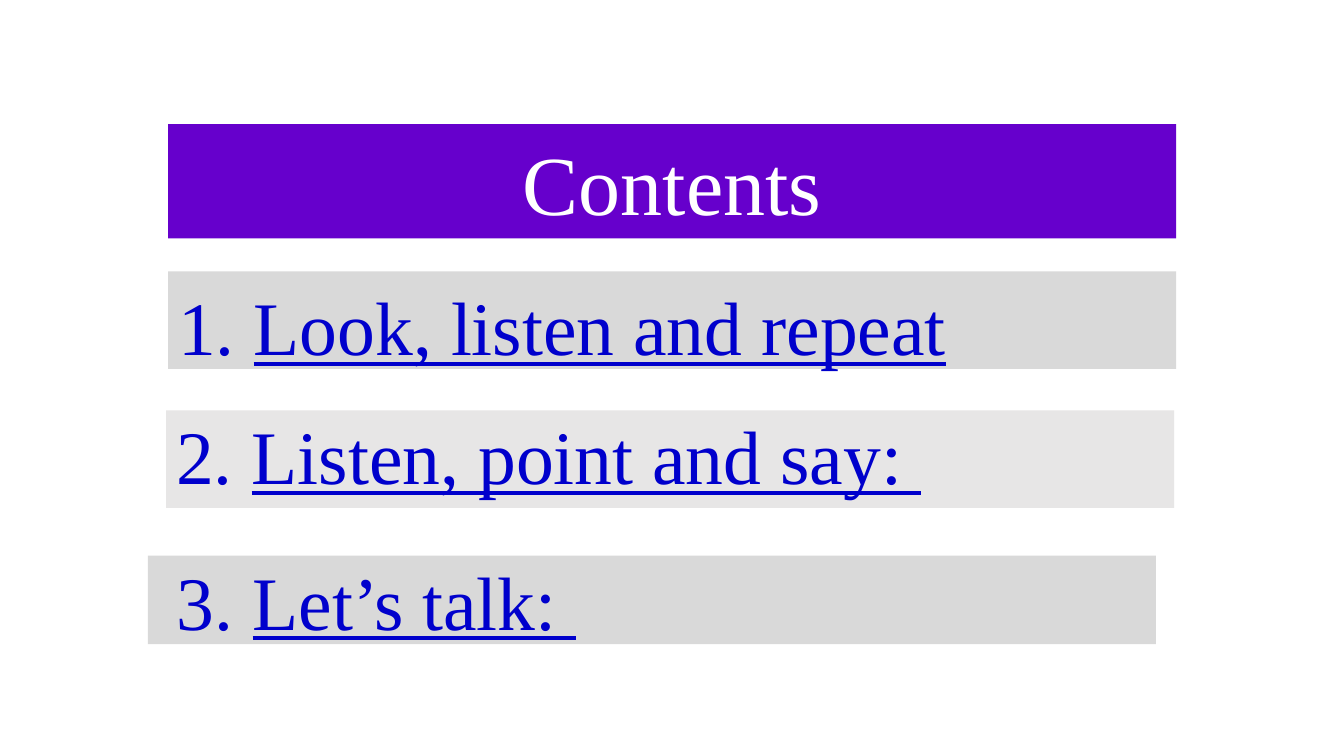
from pptx import Presentation
from pptx import util as u
from pptx.dml import color
from pptx.enum import shapes, text


def rgb(value):
    return color.RGBColor.from_string(value)


class ContentsSlide:
    FONT = "Times New Roman"
    WIDTH = 25.4
    PAD = 0.25

    def __init__(self, prs):
        self.s = prs.slides.add_slide(prs.slide_layouts[6])

    def bar(self, left, top, height, fill, pad_left=PAD, pad_top=0.13):
        """Add a filled bar and return its single paragraph."""
        sp = self.s.shapes.add_shape(
            shapes.MSO_SHAPE.RECTANGLE,
            u.Cm(left), u.Cm(top), u.Cm(self.WIDTH), u.Cm(height))
        sp.shadow.inherit = False
        sp.fill.solid()
        sp.fill.fore_color.rgb = rgb(fill)
        sp.line.fill.background()
        tf = sp.text_frame
        tf.word_wrap = True
        tf.vertical_anchor = text.MSO_ANCHOR.TOP
        tf.margin_left, tf.margin_right = u.Cm(pad_left), u.Cm(self.PAD)
        tf.margin_top, tf.margin_bottom = u.Cm(pad_top), u.Cm(0.13)
        p = tf.paragraphs[0]
        p.line_spacing = 0.9
        return tf, p

    def run(self, p, words, size, ink, underline=False):
        r = p.add_run()
        r.text = words
        r.font.name = self.FONT
        r.font.size = u.Pt(size)
        r.font.color.rgb = rgb(ink)
        if underline:
            r.font.underline = True

    def title(self, words, left, top, height):
        tf, p = self.bar(left, top, height, "6600CC")
        tf.vertical_anchor = text.MSO_ANCHOR.BOTTOM
        p.alignment = text.PP_ALIGN.CENTER
        self.run(p, words, 60, "FFFFFF")

    def entry(self, number, words, *box):
        tf, p = self.bar(*box)
        tf.margin_bottom = 0
        p.alignment = text.PP_ALIGN.LEFT
        self.run(p, f"{number}. ", 54, "0000CC")
        self.run(p, words, 54, "0000CC", underline=True)


def main():
    prs = Presentation()
    prs.slide_width, prs.slide_height = u.Cm(33.87), u.Cm(19.05)
    s = ContentsSlide(prs)

    # Heading
    s.title("Contents", 4.24, 3.13, 2.88)

    # Entries: words, left, top, height, fill, left and top padding
    entries = [
        ("Look, listen and repeat", 4.24, 6.84, 2.46, "D9D9D9", 0.25, 0.48),
        ("Listen, point and say: ", 4.19, 10.34, 2.46, "E7E6E6", 0.25, 0.23),
        ("Let’s talk: ", 3.73, 14.0, 2.23, "D9D9D9", 0.73, 0.23),
    ]
    for number, entry in enumerate(entries, 1):
        s.entry(number, *entry)

    prs.save("out.pptx")


if __name__ == "__main__":
    main()
